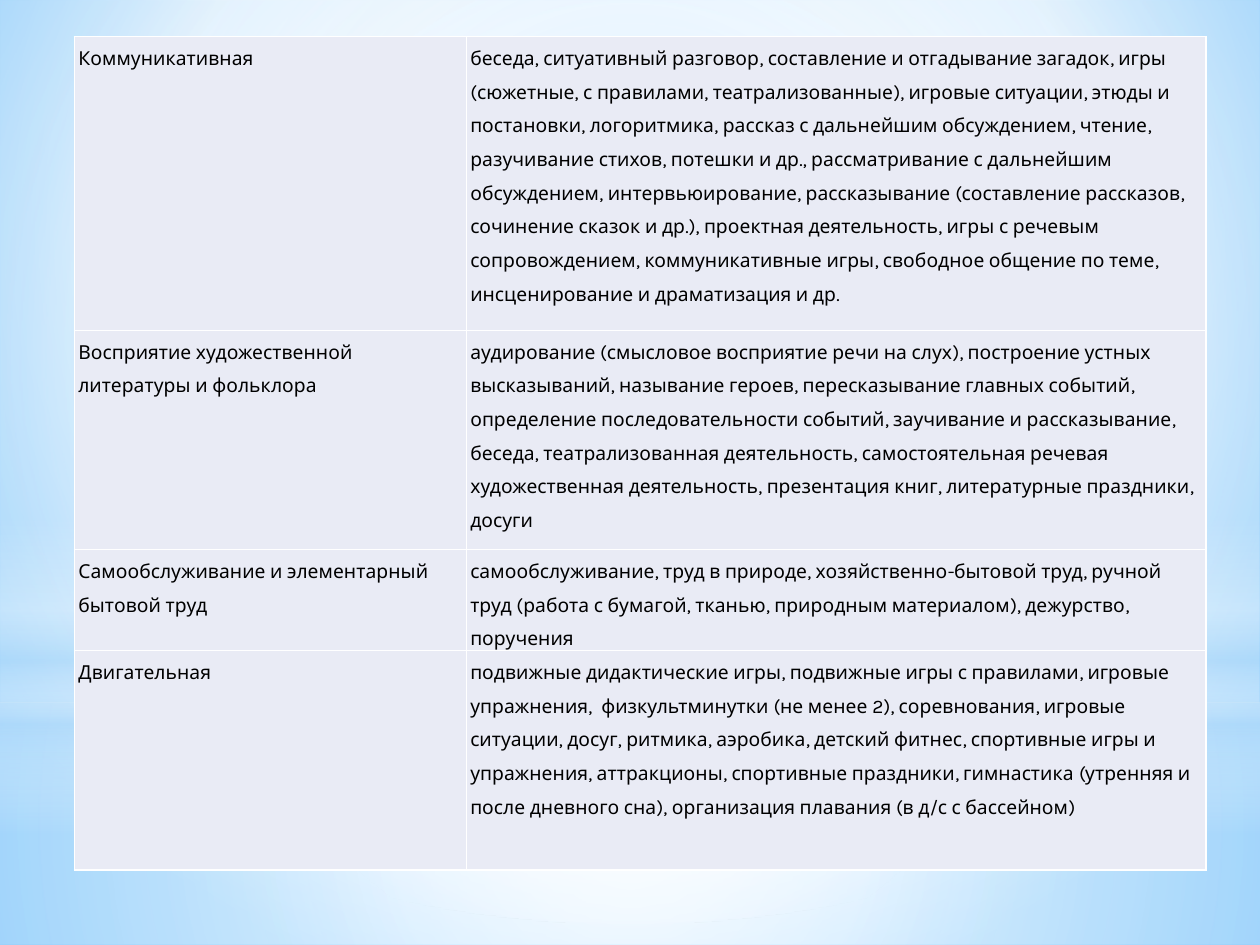
import lxml.etree
import pptx
import pptx.dml.color
import pptx.enum.shapes
import pptx.oxml.ns
import pptx.util
from pptx.util import Cm

WIDTH, HEIGHT = 25.4, 19.05
FONT, FONT_SIZE, LINE_SPACING = "Karla", 11, 1.5
TEXT_COLOUR, CELL_COLOUR, BORDER_COLOUR = "000000", "E9EBF5", "FFFFFF"

TABLE_LEFT, TABLE_TOP = 1.5, 0.74
COLUMN_WIDTHS = [7.9, 14.91]
ROWS = [  # height, kind of activity, forms of work
    (5.92, "Коммуникативная",
     "беседа, ситуативный разговор, составление и отгадывание загадок, игры "
     "(сюжетные, с правилами, театрализованные), игровые ситуации, этюды и "
     "постановки, логоритмика, рассказ с дальнейшим обсуждением, чтение, "
     "разучивание стихов, потешки и др., рассматривание с дальнейшим "
     "обсуждением, интервьюирование, рассказывание (составление рассказов, "
     "сочинение сказок и др.), проектная деятельность, игры с речевым "
     "сопровождением, коммуникативные игры, свободное общение по теме, "
     "инсценирование и драматизация и др."),
    (4.42, "Восприятие художественной литературы и фольклора",
     "аудирование (смысловое восприятие речи на слух), построение устных "
     "высказываний, называние героев, пересказывание главных событий, "
     "определение последовательности событий, заучивание и рассказывание, "
     "беседа, театрализованная деятельность, самостоятельная речевая "
     "художественная деятельность, презентация книг, литературные праздники, "
     "досуги"),
    (2.01, "Самообслуживание и элементарный бытовой труд",
     "самообслуживание, труд в природе, хозяйственно-бытовой труд, ручной "
     "труд (работа с бумагой, тканью, природным материалом), дежурство, "
     "поручения"),
    (4.42, "Двигательная",
     "подвижные дидактические игры, подвижные игры с правилами, игровые "
     "упражнения,  физкультминутки (не менее 2), соревнования, игровые "
     "ситуации, досуг, ритмика, аэробика, детский фитнес, спортивные игры и "
     "упражнения, аттракционы, спортивные праздники, гимнастика (утренняя и "
     "после дневного сна), организация плавания (в д/с с бассейном)"),
]

# Gradient stops: position, colour, opacity (all percentages)
BACKGROUND_STOPS = [(0, "9ED5FF", 100), (60, "FFFFFF", 100), (100, "5BB9FF", 100)]
BACKGROUND_FOCUS = (20, 10, 20, 60)
CENTRE = (50, 50, 50, 50)
RECTANGLE = pptx.enum.shapes.MSO_SHAPE.RECTANGLE
OVAL = pptx.enum.shapes.MSO_SHAPE.OVAL
GLOWS = [  # shape, top, height, stops, focus (None: vertical gradient)
    (RECTANGLE, 14.17, 4.88,
     [(0, "FFFFFF", 91), (37, "FFFFFF", 76), (100, "B4DCFA", 79)], CENTRE),
    (RECTANGLE, 0, 14.17,
     [(0, "FFFFFF", 89), (48, "FFFFFF", 62), (100, "B4DCFA", 79)], CENTRE),
    (RECTANGLE, 10.46, 6.35,
     [(0, "FFFFFF", 0), (29, "FFFFFF", 30), (45, "B4DCFA", 40),
      (55, "FFFFFF", 26), (65, "B4DCFA", 60), (100, "FFFFFF", 0)], None),
    (OVAL, 4.45, 14.17, [(0, "FFFFFF", 100), (56, "FFFFFF", 0)], CENTRE),
]


def colour(value):
    return pptx.dml.color.RGBColor.from_string(value)


def add_element(parent, tag, **attributes):
    element = lxml.etree.SubElement(parent, pptx.oxml.ns.qn(tag))
    for name, value in attributes.items():
        element.set(name, str(value))
    return element


def paint_gradient(fill, owner, stops, focus):
    """Give the fill found inside the owner element its own stops and direction."""
    fill.gradient()
    gradient = owner.find(".//" + pptx.oxml.ns.qn("a:gradFill"))
    for child in list(gradient):
        gradient.remove(child)
    stop_list = add_element(gradient, "a:gsLst")
    for position, value, opacity in stops:
        stop = add_element(stop_list, "a:gs", pos=position * 1000)
        stop_colour = add_element(stop, "a:srgbClr", val=value)
        if opacity < 100:
            add_element(stop_colour, "a:alpha", val=opacity * 1000)
    if focus is None:
        add_element(gradient, "a:lin", ang=90 * 60000, scaled=0)
    else:
        direction = add_element(gradient, "a:path", path="circle")
        sides = {side: share * 1000 for side, share in zip("ltrb", focus)}
        add_element(direction, "a:fillToRect", **sides)


def add_glow(slide, kind, top, height, stops, focus):
    shape = slide.shapes.add_shape(kind, 0, Cm(top), Cm(WIDTH), Cm(height))
    shape.shadow.inherit = False
    shape.line.fill.background()
    paint_gradient(shape.fill, shape.element, stops, focus)


def format_cell(cell, text):
    cell.margin_left = cell.margin_right = Cm(0.08)
    cell.margin_top = cell.margin_bottom = 0
    properties = cell._tc.get_or_add_tcPr()
    for side in "LRTB":
        border = add_element(properties, "a:ln" + side, w=pptx.util.Pt(1))
        border_fill = add_element(border, "a:solidFill")
        add_element(border_fill, "a:srgbClr", val=BORDER_COLOUR)
    cell.fill.solid()
    cell.fill.fore_color.rgb = colour(CELL_COLOUR)

    paragraph = cell.text_frame.paragraphs[0]
    paragraph.line_spacing = LINE_SPACING
    run = paragraph.add_run()
    run.text = text
    run.font.name = FONT
    run.font.size = pptx.util.Pt(FONT_SIZE)
    run.font.bold = False
    run.font.color.rgb = colour(TEXT_COLOUR)


def add_activity_table(slide):
    total_height = sum(height for height, *texts in ROWS)
    table = slide.shapes.add_table(
        len(ROWS), len(COLUMN_WIDTHS), Cm(TABLE_LEFT), Cm(TABLE_TOP),
        Cm(sum(COLUMN_WIDTHS)), Cm(total_height)).table
    table.first_row = table.horz_banding = False
    for column, width in zip(table.columns, COLUMN_WIDTHS):
        column.width = Cm(width)
    for row, (height, *texts) in zip(table.rows, ROWS):
        row.height = Cm(height)
        for cell, text in zip(row.cells, texts):
            format_cell(cell, text)


def main():
    presentation = pptx.Presentation()
    presentation.slide_width, presentation.slide_height = Cm(WIDTH), Cm(HEIGHT)
    slide = presentation.slides.add_slide(presentation.slide_layouts[6])
    paint_gradient(slide.background.fill, slide.element,
                   BACKGROUND_STOPS, BACKGROUND_FOCUS)
    for glow in GLOWS:
        add_glow(slide, *glow)
    add_activity_table(slide)
    presentation.save("out.pptx")


if __name__ == "__main__":
    main()
